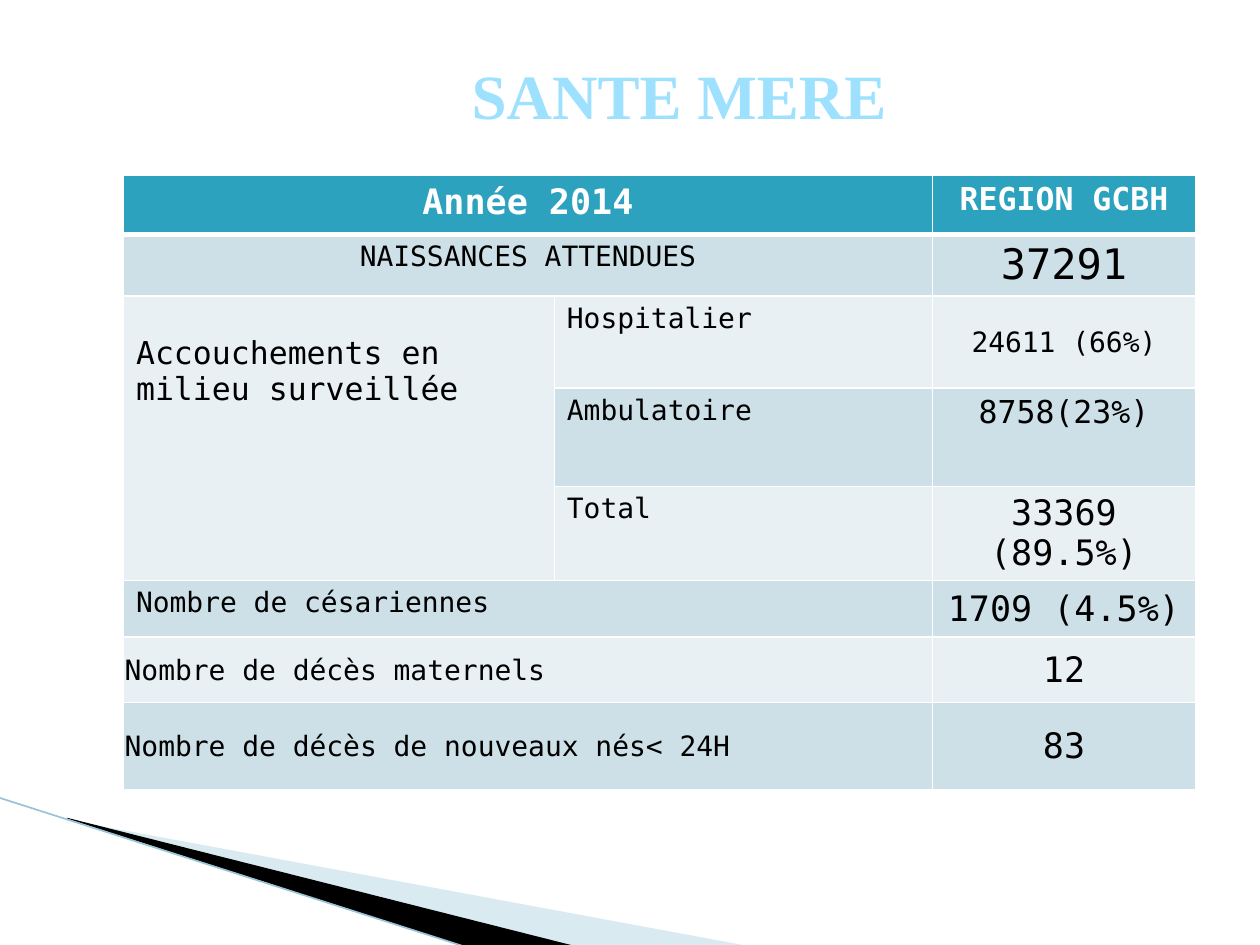
from lxml.etree import SubElement
from pptx import Presentation
from pptx.dml.color import RGBColor
from pptx.enum.shapes import MSO_CONNECTOR
from pptx.enum.text import MSO_ANCHOR, PP_ALIGN
from pptx.oxml.ns import qn
from pptx.util import Inches, Pt

COLORS = {"white": "FFFFFF", "black": "000000", "header": "2DA2BF",
          "dark": "CDE0E8", "light": "E8F0F4", "title": "9DE1FF",
          "wedge": "A0CBDC", "line": "97C5D8"}
MONO = "DejaVu Sans Mono"


def rgb(name):
    return RGBColor.from_string(COLORS[name])


def write(tf, text, align, **fmt):
    p = tf.paragraphs[0]
    p.alignment = align
    r = p.add_run()
    r.text = text
    r.font.color.rgb = rgb(fmt.pop("color"))
    for key, value in fmt.items():
        setattr(r.font, key, value)


prs = Presentation()
prs.slide_width, prs.slide_height = Inches(10), Inches(7.5)
s = prs.slides.add_slide(prs.slide_layouts[6])

wedges = [
    ("wedge", 40, [(0.55, 6.51), (5.95, 7.51), (4.56, 7.51), (0.55, 6.5)]),
    ("black", 100, [(0.53, 6.49), (4.57, 7.51), (3.72, 7.52), (0.54, 6.5)]),
]
for color, alpha, points in wedges:
    pts = [(Inches(x), Inches(y)) for x, y in points]
    fb = s.shapes.build_freeform(*pts[0])
    fb.add_line_segments(pts[1:], close=True)
    sp = fb.convert_to_shape()
    sp.shadow.inherit = False
    sp.line.fill.background()
    sp.fill.solid()
    sp.fill.fore_color.rgb = rgb(color)
    if alpha < 100:
        clr = sp.fill._xPr.find(".//" + qn("a:srgbClr"))
        SubElement(clr, qn("a:alpha"), val=str(alpha * 1000))

cx = s.shapes.add_connector(MSO_CONNECTOR.STRAIGHT, Inches(-0.01), Inches(6.33),
                            Inches(3.71), Inches(7.52))
cx.line.color.rgb = rgb("line")
cx.line.width = Pt(0.95)
SubElement(cx._element.spPr, qn("a:effectLst"))

widths = [3.42, 3, 2.09]
heights = [0.47, 0.49, 0.73, 0.78, 0.7, 0.45, 0.52, 0.69]
frame = s.shapes.add_table(len(heights), len(widths), Inches(0.98), Inches(1.39),
                           Inches(sum(widths)), Inches(sum(heights)))
table = frame.table
for col, width in zip(table.columns, widths):
    col.width = Inches(width)
for row, height in zip(table.rows, heights):
    row.height = Inches(height)

for i in range(len(heights)):
    for j in range(len(widths)):
        cell = table.cell(i, j)
        tcPr = cell._tc.get_or_add_tcPr()
        for side in "LRTB":
            thick = (i, side) in [(0, "B"), (1, "T")]
            ln = SubElement(tcPr, qn("a:ln" + side), w=str(Pt(3 if thick else 1)))
            fill = SubElement(ln, qn("a:solidFill"))
            SubElement(fill, qn("a:srgbClr"), val=COLORS["white"])
        cell.fill.solid()
        band = "header" if i == 0 else "dark" if i % 2 else "light"
        if (i, j) in [(3, 0), (4, 0)]:
            band = "light"
        cell.fill.fore_color.rgb = rgb(band)

for i in (0, 1, 5, 6, 7):
    table.cell(i, 0).merge(table.cell(i, 1))
table.cell(2, 0).merge(table.cell(4, 0))

L, C = PP_ALIGN.LEFT, PP_ALIGN.CENTER
tight = (0.01, 0.01, 0.01, 0)
cells = [
    (0, 0, "Année 2014", 20, C, None),
    (0, 2, "REGION GCBH", 18, C, None),
    (1, 0, "NAISSANCES ATTENDUES", 16, C, None),
    (1, 2, "37291", 24, C, (0, 0, 0, 0)),
    (2, 0, "Accouchements en milieu surveillée", 18, L, None),
    (2, 1, "Hospitalier", 16, L, None),
    (2, 2, "24611 (66%)", 16, C, tight),
    (3, 1, "Ambulatoire", 16, L, None),
    (3, 2, "8758(23%)", 18, C, None),
    (4, 1, "Total", 16, L, None),
    (4, 2, "33369 (89.5%)", 20, C, None),
    (5, 0, "Nombre de césariennes", 16, L, None),
    (5, 2, "1709 (4.5%)", 20, C, tight),
    (6, 0, "Nombre de décès maternels", 16, L, tight),
    (6, 2, "12", 20, C, tight),
    (7, 0, "Nombre de décès de nouveaux nés< 24H", 16, L, tight),
    (7, 2, "83", 20, C, tight),
]
for i, j, text, size, align, margins in cells:
    cell = table.cell(i, j)
    write(cell.text_frame, text, align, size=Pt(size), name=MONO, bold=i == 0,
          color="black" if i else "white")
    if margins:
        cell.vertical_anchor = MSO_ANCHOR.MIDDLE
        for side, margin in zip(("left", "top", "right", "bottom"), margins):
            setattr(cell, "margin_" + side, Inches(margin))
table.cell(2, 0).margin_top = Inches(0.31)

tb = s.shapes.add_textbox(Inches(1.14), Inches(0.36), Inches(8.5), Inches(0.77))
tf = tb.text_frame
tf.word_wrap = True
tf.vertical_anchor = MSO_ANCHOR.MIDDLE
write(tf, "SANTE MERE", C, size=Pt(36), name="Times New Roman", bold=True, color="title")

prs.save("out.pptx")
